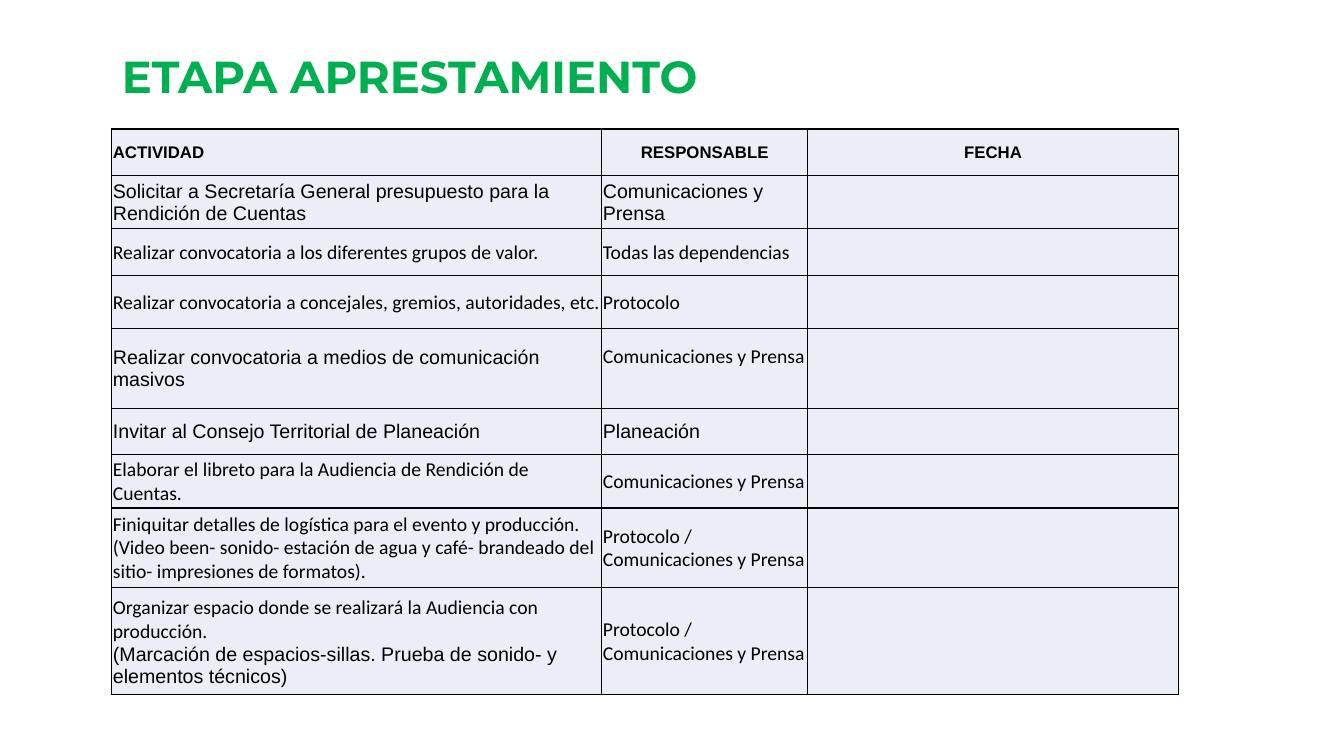
from lxml import etree
from pptx import Presentation
from pptx.dml.color import RGBColor
from pptx.enum.text import MSO_ANCHOR, PP_ALIGN
from pptx.oxml.ns import qn
from pptx.util import Inches, Pt

MIDDLE = MSO_ANCHOR.MIDDLE
LEFT, CENTER = PP_ALIGN.LEFT, PP_ALIGN.CENTER
ARIAL, CALIBRI, MONTSERRAT = "Arial", "Calibri", "Montserrat"
BLACK, GREEN, PALE_BLUE = "000000", "00B050", "EAEFF7"
COLUMN_WIDTHS = [4.86, 2.04, 3.68]
ROW_HEIGHTS = [0.46, 0.53, 0.46, 0.53, 0.79, 0.46, 0.53, 0.79, 1.06]
RAISED_ROW = 4
HEADERS = [("ACTIVIDAD", LEFT), ("RESPONSABLE", CENTER), ("FECHA", CENTER)]
PRESS = "Comunicaciones y Prensa"
PROTOCOL_PRESS = "Protocolo / Comunicaciones y Prensa"
ACTIVITIES = [
    ([("Solicitar a Secretaría General presupuesto para la Rendición de Cuentas", ARIAL)],
     (PRESS, ARIAL)),
    ([("Realizar convocatoria a los diferentes grupos de valor.", CALIBRI)],
     ("Todas las dependencias", CALIBRI)),
    ([("Realizar convocatoria a concejales, gremios, autoridades, etc.", CALIBRI)],
     ("Protocolo", CALIBRI)),
    ([("Realizar convocatoria a medios de comunicación masivos", ARIAL)],
     (PRESS, CALIBRI)),
    ([("Invitar al Consejo Territorial de Planeación", ARIAL)],
     ("Planeación", ARIAL)),
    ([("Elaborar el libreto para la Audiencia de Rendición de Cuentas.", CALIBRI)],
     (PRESS, CALIBRI)),
    ([("Finiquitar detalles de logística para el evento y producción.", CALIBRI),
      ("(Video been- sonido- estación de agua y café- brandeado del sitio- "
       "impresiones de formatos).", CALIBRI)],
     (PROTOCOL_PRESS, CALIBRI)),
    ([("Organizar espacio donde se realizará la Audiencia con producción.", CALIBRI),
      ("(Marcación de espacios-sillas. Prueba de sonido- y elementos técnicos)", ARIAL)],
     (PROTOCOL_PRESS, CALIBRI)),
]


def color(value):
    """Return the colour for a hex string."""
    return RGBColor.from_string(value)


def write(para, text, font=ARIAL, size=14, bold=False, fill=BLACK, align=LEFT):
    """Put formatted text in a paragraph."""
    para.alignment = align
    span = para.add_run()
    span.text = text
    span.font.name = font
    span.font.size = Pt(size)
    span.font.bold = bold
    span.font.color.rgb = color(fill)


def style_cell(cell):
    """Give a cell its margins, black borders and fill."""
    cell.vertical_anchor = MIDDLE
    cell.margin_left = cell.margin_right = cell.margin_top = Inches(0.01)
    cell.margin_bottom = 0
    properties = cell._tc.get_or_add_tcPr()
    for side in ("lnL", "lnR", "lnT", "lnB"):
        line = etree.SubElement(properties, qn("a:" + side), w=str(Pt(1)))
        solid = etree.SubElement(line, qn("a:solidFill"))
        etree.SubElement(solid, qn("a:srgbClr"), val=BLACK)
    cell.fill.solid()
    cell.fill.fore_color.rgb = color(PALE_BLUE)


def add_title(page, left, top, width, height):
    """Add the slide heading."""
    box = page.shapes.add_textbox(Inches(left), Inches(top), Inches(width), Inches(height))
    box.text_frame.word_wrap = True
    write(box.text_frame.paragraphs[0], "ETAPA APRESTAMIENTO",
          font=MONTSERRAT, size=32, bold=True, fill=GREEN)


def add_activities(page, left, top, width, height):
    """Add the table of activities, people in charge and dates."""
    table = page.shapes.add_table(len(ROW_HEIGHTS), len(COLUMN_WIDTHS), Inches(left),
                                  Inches(top), Inches(width), Inches(height)).table
    table.first_row = table.horz_banding = False
    for column, column_width in zip(table.columns, COLUMN_WIDTHS):
        column.width = Inches(column_width)
    for row, row_height in zip(table.rows, ROW_HEIGHTS):
        row.height = Inches(row_height)
    for cell in table.iter_cells():
        style_cell(cell)
    for index, (text, align) in enumerate(HEADERS):
        write(table.cell(0, index).text_frame.paragraphs[0], text,
              size=12, bold=True, align=align)
    for index, (activity, person) in enumerate(ACTIVITIES, start=1):
        for column, lines in enumerate((activity, [person])):
            frame = table.cell(index, column).text_frame
            for number, (text, font) in enumerate(lines):
                para = frame.add_paragraph() if number else frame.paragraphs[0]
                write(para, text, font=font)
    table.cell(RAISED_ROW, 1).margin_bottom = Inches(0.24)


def main():
    """Build the slide and save the deck."""
    deck = Presentation()
    deck.slide_width, deck.slide_height = Inches(13.33), Inches(7.5)
    page = deck.slides.add_slide(deck.slide_layouts[6])
    add_activities(page, 1.11, 1.28, sum(COLUMN_WIDTHS), sum(ROW_HEIGHTS))
    add_title(page, 1.11, 0.43, 7.99, 0.64)
    deck.save("out.pptx")


if __name__ == "__main__":
    main()
